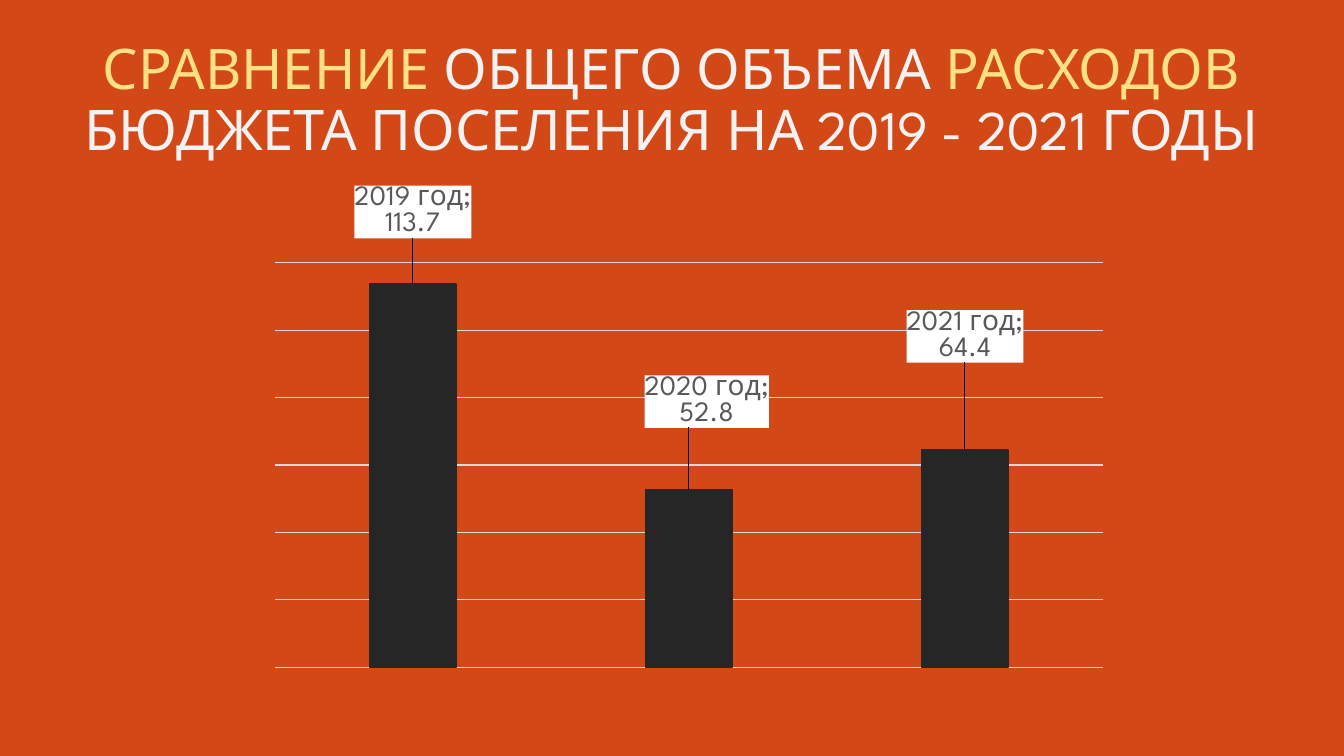
from pptx import Presentation
from pptx.chart.data import CategoryChartData
from pptx.dml.color import RGBColor
from pptx.enum.chart import XL_CHART_TYPE
from pptx.enum.text import MSO_ANCHOR, PP_ALIGN
from pptx.oxml import parse_xml
from pptx.oxml.ns import nsdecls, qn
from pptx.util import Emu, Pt

COLUMNS = XL_CHART_TYPE.COLUMN_CLUSTERED
CENTER = PP_ALIGN.CENTER
MIDDLE = MSO_ANCHOR.MIDDLE
FONT = "League Spartan"
PX = 9144  # EMU in one px, 100 px to the inch
ORANGE, YELLOW, PALE, WHITE = "D34817", "FFE085", "F2F2F2", "FFFFFF"
DARK, GREY, GRID, BLACK = "262626", "595959", "D9D9D9", "000000"

TITLE = [
    ("СРАВНЕНИЕ", YELLOW),
    (" ОБЩЕГО ОБЪЕМА ", PALE),
    ("РАСХОДОВ", YELLOW),
    (" БЮДЖЕТА ПОСЕЛЕНИЯ НА 2019 - 2021 ГОДЫ", PALE),
]
# Year, spending, label shift as a share of the chart's width and height
SPENDING = [
    ("2019 год", 113.7, 0, -0.08),
    ("2020 год", 52.8, 0.02, -0.11),
    ("2021 год", 64.4, 0, -0.16),
]


def px(length):
    return Emu(length * PX)


def color(value):
    return RGBColor.from_string(value)


def format_font(font, size, fill):
    font.name = FONT
    font.size = Pt(size)
    font.color.rgb = color(fill)


def add_text(para, text, size=40, fill=PALE):
    span = para.add_run()
    span.text = text
    format_font(span.font, size, fill)


def add_title(page, left, top, width, height):
    box = page.shapes.add_textbox(px(left), px(top), px(width), px(height))
    frame = box.text_frame
    frame.word_wrap = True
    frame.vertical_anchor = MIDDLE
    para = frame.paragraphs[0]
    para.alignment = CENTER
    para.line_spacing = 0.9
    for text, fill in TITLE:
        add_text(para, text, fill=fill)


def manual_layout(places):
    parts = "".join(f'<c:{name} val="{value}"/>' for name, value in places)
    return (f'<c:layout {nsdecls("c")}><c:manualLayout>{parts}'
            '</c:manualLayout></c:layout>')


def add_labels(series):
    look = (
        f'<c:spPr><a:solidFill><a:srgbClr val="{WHITE}"/></a:solidFill></c:spPr>'
        '<c:txPr><a:bodyPr wrap="square" anchor="ctr"/><a:p><a:pPr>'
        f'<a:defRPr sz="2000"><a:solidFill><a:srgbClr val="{GREY}"/></a:solidFill>'
        f'<a:latin typeface="{FONT}"/></a:defRPr></a:pPr>'
        '<a:endParaRPr lang="ru-RU"/></a:p></c:txPr><c:dLblPos val="outEnd"/>'
        '<c:showLegendKey val="0"/><c:showVal val="1"/><c:showCatName val="1"/>'
        '<c:showSerName val="0"/><c:showPercent val="0"/><c:showBubbleSize val="0"/>'
        '<c:separator>; </c:separator>'
    )
    points = "".join(
        f'<c:dLbl><c:idx val="{index}"/>{manual_layout([("x", x), ("y", y)])}{look}</c:dLbl>'
        for index, (_, _, x, y) in enumerate(SPENDING)
    )
    labels = parse_xml(f'<c:dLbls {nsdecls("c", "a")}>{points}{look}</c:dLbls>')
    series._element.find(qn("c:cat")).addprevious(labels)


def add_spending_chart(page, left, top, width, height):
    data = CategoryChartData()
    data.categories = [row[0] for row in SPENDING]
    data.add_series("Series 1", [row[1] for row in SPENDING])
    chart = page.shapes.add_chart(
        COLUMNS, px(left), px(top), px(width), px(height), data).chart
    chart.has_legend = False
    chart.has_title = False
    format_font(chart.font, 20, BLACK)

    # Hidden axes with horizontal grid lines
    chart.category_axis.visible = False
    values = chart.value_axis
    values.visible = False
    values.minimum_scale, values.maximum_scale, values.major_unit = 0, 120, 20
    values.has_major_gridlines = True
    grid = values.major_gridlines.format.line
    grid.color.rgb = color(GRID)
    grid.width = Pt(0.75)

    # Columns
    plot = chart.plots[0]
    plot.gap_width = 219
    plot.overlap = -27
    plot.vary_by_categories = False
    series = plot.series[0]
    series.format.fill.solid()
    series.format.fill.fore_color.rgb = color(DARK)
    series.format.line.color.rgb = color(DARK)
    series.format.line.width = Pt(1)
    add_labels(series)

    # Plot area
    area = chart._chartSpace.chart.plotArea
    for old in area.findall(qn("c:layout")):
        area.remove(old)
    area.insert(0, parse_xml(manual_layout([
        ("layoutTarget", "inner"), ("xMode", "edge"), ("yMode", "edge"),
        ("x", 0.058), ("y", 0.148), ("w", 0.924), ("h", 0.775)])))


def main():
    deck = Presentation()
    deck.slide_width, deck.slide_height = px(1333), px(750)
    page = deck.slides.add_slide(deck.slide_layouts[6])
    page.background.fill.solid()
    page.background.fill.fore_color.rgb = color(ORANGE)
    add_title(page, 21, 27, 1290, 148)
    add_spending_chart(page, 221, 184, 889, 518)
    deck.save("out.pptx")


if __name__ == "__main__":
    main()
